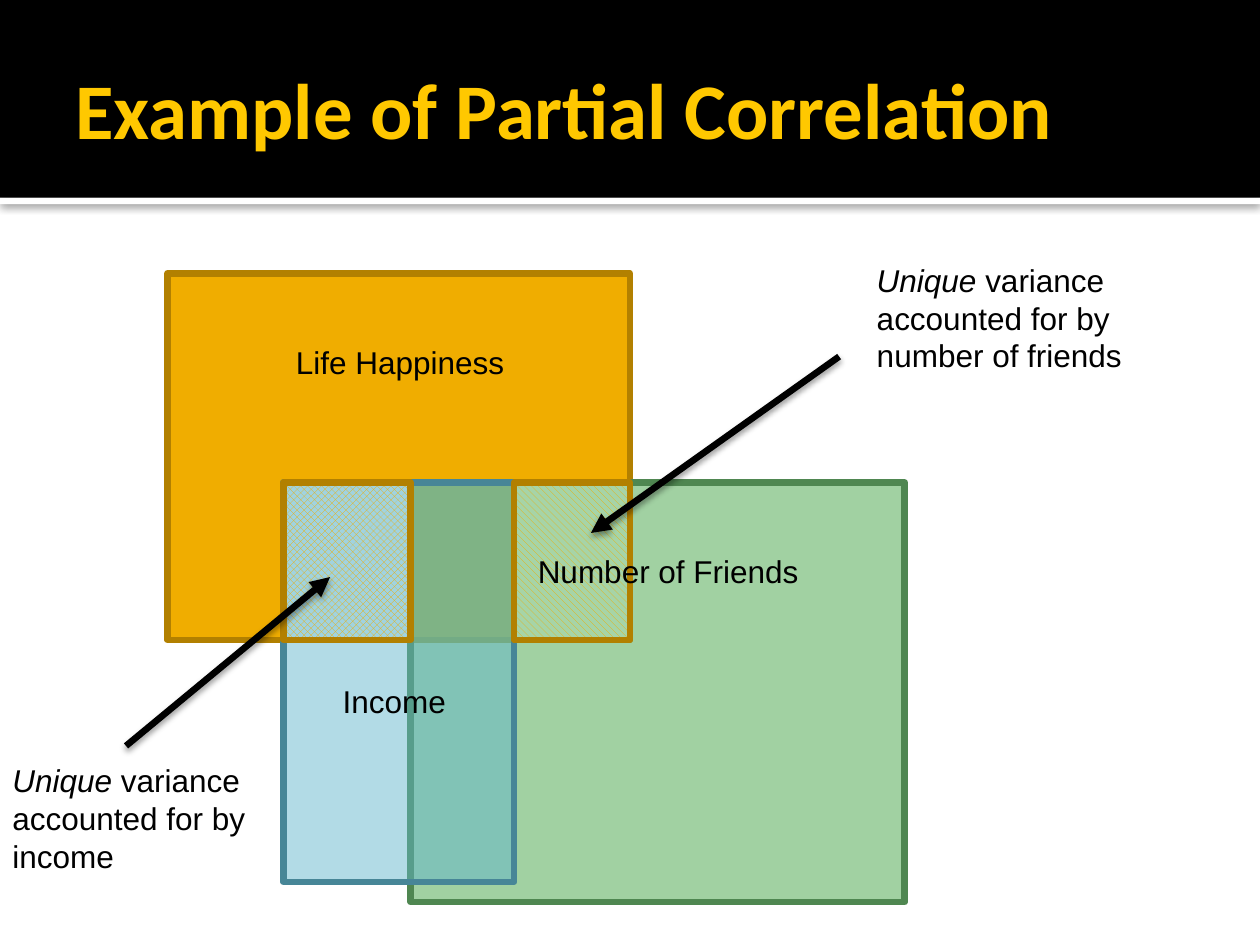
import pptx
import pptx.dml.color
import pptx.enum.dml
import pptx.enum.shapes
import pptx.enum.text
import pptx.oxml.ns
import pptx.util
from lxml import etree

Inches = pptx.util.Inches
Pt = pptx.util.Pt
RGBColor = pptx.dml.color.RGBColor
Pattern = pptx.enum.dml.MSO_PATTERN

BLACK = RGBColor(0x00, 0x00, 0x00)
WHITE = RGBColor(0xFF, 0xFF, 0xFF)
YELLOW = RGBColor(0xFF, 0xC8, 0x00)
ORANGE = RGBColor(0xF0, 0xAD, 0x00)
BROWN = RGBColor(0xB2, 0x80, 0x00)
GREEN = RGBColor(0x6B, 0xB7, 0x6D)
DARK_GREEN = RGBColor(0x4F, 0x87, 0x51)
PALE_GREEN = RGBColor(0xA6, 0xD4, 0xA7)
BLUE = RGBColor(0x60, 0xB5, 0xCC)
DARK_BLUE = RGBColor(0x47, 0x86, 0x97)
PALE_BLUE = RGBColor(0xA0, 0xD3, 0xE0)


def add_xml(parent, tag, **attributes):
    child = etree.SubElement(parent, pptx.oxml.ns.qn(tag))
    for name, value in attributes.items():
        child.set(name, str(value))
    return child


def write(para, text, font="Arial", size=18, color=BLACK, bold=False, italic=False):
    span = para.add_run()
    span.text = text
    span.font.name = font
    span.font.size = Pt(size)
    span.font.color.rgb = color
    span.font.bold = bold
    span.font.italic = italic


def cast_shadow(shape, alpha, blur, distance):
    """Give the shape a black shadow that falls straight down."""
    properties = shape._element.spPr
    for old in properties.findall(pptx.oxml.ns.qn("a:effectLst")):
        properties.remove(old)
    effects = add_xml(properties, "a:effectLst")
    shadow = add_xml(effects, "a:outerShdw", blurRad=Pt(blur), dist=Pt(distance),
                     dir=90 * 60000, algn="ctr", rotWithShape=0)
    color = add_xml(shadow, "a:srgbClr", val=BLACK)
    add_xml(color, "a:alpha", val=alpha * 1000)


class Diagram:
    """Holds the current page and the line style of the diagram."""

    def __init__(self, page, line_width=3.78):
        self.page = page
        self.shapes = page.shapes
        self.line_width = Pt(line_width)

    def title(self, text, left, top, width, height):
        box = self.shapes.title
        box.left, box.top = Inches(left), Inches(top)
        box.width, box.height = Inches(width), Inches(height)
        frame = box.text_frame
        frame.vertical_anchor = pptx.enum.text.MSO_ANCHOR.MIDDLE
        frame.margin_left = Inches(0.1)
        frame.margin_right = frame.margin_top = frame.margin_bottom = Inches(0.05)
        para = frame.paragraphs[0]
        para.alignment = pptx.enum.text.PP_ALIGN.LEFT
        write(para, text, font="Calibri", size=45, color=YELLOW, bold=True)
        self.shapes._spTree.append(box._element)  # bring in front of the banner

    def rectangle(self, left, top, right, bottom, color, border=None, alpha=None,
                  pattern=None, back=None):
        box = self.shapes.add_shape(
            pptx.enum.shapes.MSO_SHAPE.RECTANGLE, Inches(left), Inches(top),
            Inches(right - left), Inches(bottom - top))
        box.shadow.inherit = False
        if pattern is None:
            box.fill.solid()
            box.fill.fore_color.rgb = color
        else:
            box.fill.patterned()
            box.fill.pattern = pattern
            box.fill.fore_color.rgb = color
            box.fill.back_color.rgb = back
        if alpha is not None:
            fill_color = box._element.spPr.find(".//" + pptx.oxml.ns.qn("a:srgbClr"))
            add_xml(fill_color, "a:alpha", val=alpha * 1000)
        if border is None:
            box.line.fill.background()
        else:
            box.line.color.rgb = border
            box.line.width = self.line_width
            add_xml(box.line._ln, "a:round")
        return box

    def label(self, text, left, top, width, height, lead=""):
        """Add a text box; the lead words come first, in italics."""
        box = self.shapes.add_textbox(Inches(left), Inches(top), Inches(width), Inches(height))
        box.text_frame.word_wrap = True
        para = box.text_frame.paragraphs[0]
        if lead:
            write(para, lead, italic=True)
        write(para, text)

    def arrow(self, start, end):
        line = self.shapes.add_connector(
            pptx.enum.shapes.MSO_CONNECTOR.STRAIGHT,
            *(Inches(length) for length in (*start, *end)))
        line.line.color.rgb = BLACK
        line.line.width = self.line_width
        add_xml(line.line._ln, "a:tailEnd", type="triangle")
        cast_shadow(line, alpha=38, blur=3.5, distance=2)


def main():
    deck = pptx.Presentation()
    deck.slide_width, deck.slide_height = Inches(10), Inches(7.5)
    title_only = deck.slide_layouts[5]
    diagram = Diagram(deck.slides.add_slide(title_only))

    banner_bottom = 1.57
    stripe = diagram.rectangle(0, banner_bottom, 10, banner_bottom + 0.05, WHITE)
    cast_shadow(stripe, alpha=60, blur=5, distance=0.8)
    diagram.rectangle(0, 0, 10, banner_bottom, BLACK)
    diagram.title("Example of Partial Correlation", 0.5, 0.17, 9, 1.37)

    # Edges shared by the overlapping areas
    happiness_right, happiness_bottom = 5, 5.08
    income_left, income_right = 2.25, 4.08
    friends_left = 3.26
    overlap_top = 3.83

    diagram.rectangle(1.33, 2.17, happiness_right, happiness_bottom, ORANGE, BROWN)
    diagram.rectangle(friends_left, overlap_top, 7.18, 7.16, GREEN, DARK_GREEN, alpha=63)
    diagram.label("Life Happiness", 2.25, 2.67, 2.25, 0.4)
    diagram.rectangle(income_left, overlap_top, income_right, 7, BLUE, DARK_BLUE, alpha=48)
    diagram.rectangle(income_left, overlap_top, friends_left, happiness_bottom, ORANGE, BROWN,
                      pattern=Pattern.SOLID_DIAMOND, back=PALE_BLUE)
    diagram.label("Income", 2.62, 5.36, 1.08, 0.42)
    diagram.rectangle(income_right, overlap_top, happiness_right, happiness_bottom, ORANGE, BROWN,
                      pattern=Pattern.WIDE_DOWNWARD_DIAGONAL, back=PALE_GREEN)
    diagram.label("Number of Friends", 4.17, 4.33, 2.5, 0.4)

    diagram.arrow((1, 5.92), (2.62, 4.58))
    diagram.arrow((6.66, 2.83), (4.69, 4.23))
    for left, top, cause in ((6.86, 2.02, "number of friends"), (0, 5.99, "income")):
        diagram.label(f" variance accounted for by {cause}", left, top, 2.39, 1.01, lead="Unique")

    deck.save("out.pptx")


if __name__ == "__main__":
    main()
